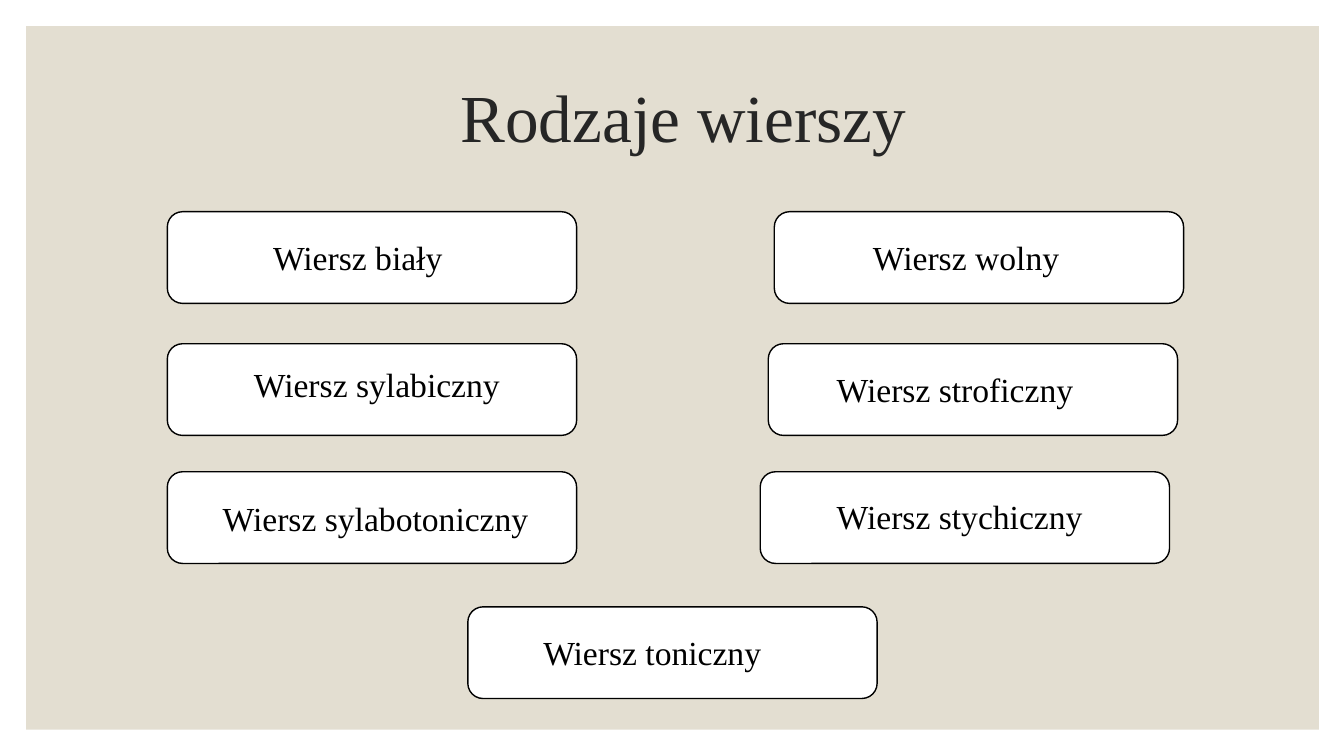
from pptx import Presentation
from pptx.dml.color import RGBColor
from pptx.enum.shapes import MSO_SHAPE
from pptx.enum.text import MSO_ANCHOR, MSO_AUTO_SIZE, PP_ALIGN
from pptx.util import Inches, Pt

BEIGE = RGBColor(0xE3, 0xDE, 0xD1)
WHITE = RGBColor(0xFF, 0xFF, 0xFF)
BLACK = RGBColor(0x00, 0x00, 0x00)
CHARCOAL = RGBColor(0x26, 0x26, 0x26)
FONT = "Times New Roman"

CARD_WIDTH, CARD_HEIGHT = 4.06, 0.91
LABEL_HEIGHT = 0.5
ROW_TOPS = (2.1, 3.41, 4.68, 6.02)

# row, card left, label left, label offset from card top, label width, wording
VERSE_TYPES = (
    (0, 1.66, 2.61, 0.2, 4.4, "Wiersz biały"),
    (1, 1.66, 2.42, 0.15, 4.93, "Wiersz sylabiczny"),
    (2, 1.66, 2.11, 0.21, 5.11, "Wiersz sylabotoniczny"),
    (0, 7.68, 8.56, 0.2, 2.74, "Wiersz wolny"),
    (1, 7.62, 8.2, 0.2, 4.1, "Wiersz stroficzny"),
    (2, 7.54, 8.2, 0.19, 4.6, "Wiersz stychiczny"),
    (3, 4.64, 5.29, 0.2, 4.66, "Wiersz toniczny"),
)


def write(frame, wording, size, color):
    frame.text = wording
    font = frame.paragraphs[0].runs[0].font
    font.name = FONT
    font.size = Pt(size)
    font.color.rgb = color


def add_panel(slide):
    panel = slide.shapes.add_shape(
        MSO_SHAPE.RECTANGLE, Inches(0.26), Inches(0.26), Inches(12.82), Inches(6.98))
    panel.shadow.inherit = False
    panel.fill.solid()
    panel.fill.fore_color.rgb = BEIGE
    panel.line.fill.background()
    slide.shapes.element.insert(2, panel.element)


def set_title(slide, wording):
    title = slide.shapes.title
    title.left, title.top = Inches(1.28), Inches(0.45)
    title.width, title.height = Inches(11), Inches(1.5)
    write(title.text_frame, wording, 48, CHARCOAL)
    title.text_frame.vertical_anchor = MSO_ANCHOR.MIDDLE
    title.text_frame.paragraphs[0].alignment = PP_ALIGN.CENTER
    title.text_frame.paragraphs[0].line_spacing = 0.9


def add_card(slide, left, top):
    card = slide.shapes.add_shape(
        MSO_SHAPE.ROUNDED_RECTANGLE, Inches(left), Inches(top),
        Inches(CARD_WIDTH), Inches(CARD_HEIGHT))
    card.shadow.inherit = False
    card.fill.solid()
    card.fill.fore_color.rgb = WHITE
    card.line.color.rgb = BLACK
    card.line.width = Pt(1)


def add_label(slide, left, top, width, wording):
    label = slide.shapes.add_textbox(
        Inches(left), Inches(top), Inches(width), Inches(LABEL_HEIGHT))
    label.text_frame.word_wrap = True
    label.text_frame.auto_size = MSO_AUTO_SIZE.SHAPE_TO_FIT_TEXT
    write(label.text_frame, wording, 24, BLACK)


def main():
    presentation = Presentation()
    presentation.slide_width = Inches(13.33)
    presentation.slide_height = Inches(7.5)
    slide = presentation.slides.add_slide(presentation.slide_layouts[5])
    add_panel(slide)
    set_title(slide, "Rodzaje wierszy")
    for row, card_left, label_left, offset, label_width, wording in VERSE_TYPES:
        top = ROW_TOPS[row]
        add_card(slide, card_left, top)
        add_label(slide, label_left, top + offset, label_width, wording)
    presentation.save("out.pptx")


if __name__ == "__main__":
    main()
